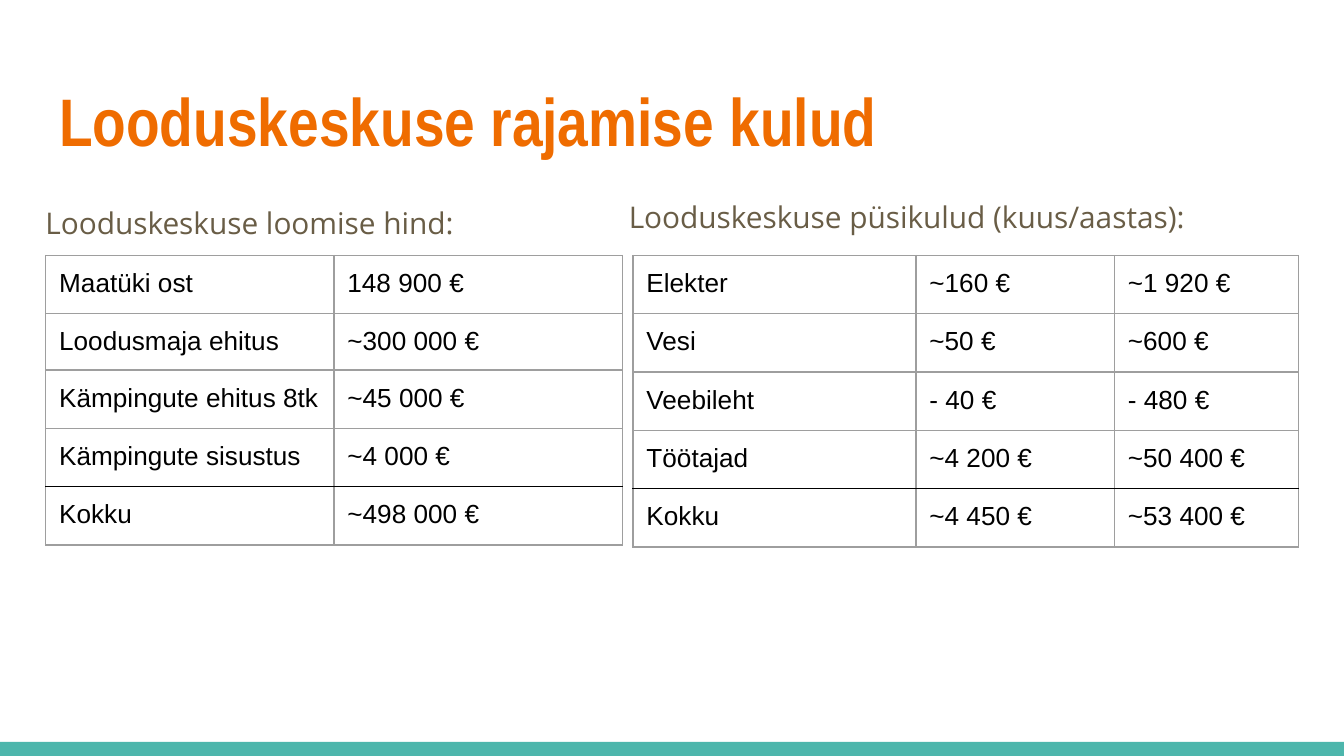
from lxml.etree import SubElement
from pptx import Presentation
from pptx.dml.color import RGBColor
from pptx.enum.shapes import MSO_SHAPE as Shape
from pptx.enum.text import MSO_ANCHOR as Anchor, MSO_AUTO_SIZE as AutoSize, PP_ALIGN as Align
from pptx.oxml.ns import qn
from pptx.util import Inches, Pt

GREY = "9E9E9E"
BLACK = "000000"
PADDING = Inches(0.1)
ROW_HEIGHT = 2.17 / 5
CREATION_COSTS = [
    ["Maatüki ost", "148 900 €"],
    ["Loodusmaja ehitus", "~300 000 €"],
    ["Kämpingute ehitus 8tk", "~45 000 €"],
    ["Kämpingute sisustus", "~4 000 €"],
    ["Kokku", "~498 000 €"],
]
RUNNING_COSTS = [
    ["Elekter", "~160 €", "~1 920 €"],
    ["Vesi", "~50 €", "~600 €"],
    ["Veebileht", "- 40 €", "- 480 €"],
    ["Töötajad", "~4 200 €", "~50 400 €"],
    ["Kokku", "~4 450 €", "~53 400 €"],
]


def color(value):
    return RGBColor.from_string(value)


def write_text(frame, text, *, size, font, fill, bold=False, spacing=None):
    para = frame.paragraphs[0]
    para.alignment = Align.LEFT
    para.line_spacing = spacing
    span = para.add_run()
    span.text = text
    span.font.size = Pt(size)
    span.font.name = font
    span.font.bold = bold
    span.font.color.rgb = color(fill)


def set_frame(frame):
    frame.word_wrap = True
    frame.auto_size = AutoSize.NONE
    frame.vertical_anchor = Anchor.TOP
    frame.margin_left = frame.margin_right = PADDING
    frame.margin_top = frame.margin_bottom = PADDING


def add_title(page, text):
    title = page.shapes.title
    title.left, title.top = Inches(0.34), Inches(0.49)
    title.width, title.height = Inches(9.32), Inches(0.77)
    set_frame(title.text_frame)
    write_text(title.text_frame, text, size=36, font="Arial Narrow", fill="EF6C00", bold=True)


def add_subtitle(page, text, left, width, spacing=None):
    box = page.shapes.add_textbox(Inches(left), Inches(1.38), Inches(width), Inches(0.51))
    set_frame(box.text_frame)
    write_text(box.text_frame, text, size=16, font="Open Sans", fill="695D46", spacing=spacing)


def set_borders(cell, **sides):
    properties = cell._tc.get_or_add_tcPr()
    for position, (side, value) in enumerate(sides.items()):
        line = SubElement(properties, qn(f"a:ln{side}"), w=str(Pt(0.75)))
        fill = SubElement(line, qn("a:solidFill"))
        SubElement(fill, qn("a:srgbClr"), val=value)
        properties.insert(position, line)


def add_cost_table(page, rows, left, width, shares, heights):
    frame = page.shapes.add_table(
        len(rows), len(shares), Inches(left), Inches(1.9), Inches(width), Inches(sum(heights))
    )
    table = frame.table
    table.first_row = table.horz_banding = False
    for column, share in zip(table.columns, shares):
        column.width = Inches(width * share / sum(shares))
    total = len(rows) - 1
    for index, (values, height) in enumerate(zip(rows, heights)):
        table.rows[index].height = Inches(height)
        top = BLACK if index == total else GREY
        bottom = BLACK if index == total - 1 else GREY
        for cell, value in zip(table.rows[index].cells, values):
            cell.margin_left = cell.margin_right = PADDING
            cell.margin_top = cell.margin_bottom = PADDING
            cell.fill.background()
            set_borders(cell, L=GREY, R=GREY, T=top, B=bottom)
            write_text(cell.text_frame, value, size=14, font="Arial", fill=BLACK)


def add_footer_bar(page):
    bar = page.shapes.add_shape(Shape.RECTANGLE, 0, Inches(5.52), Inches(10), Inches(0.11))
    bar.shadow.inherit = False
    bar.fill.solid()
    bar.fill.fore_color.rgb = color("4DB6AC")
    bar.line.fill.background()


def main():
    deck = Presentation()
    deck.slide_width = Inches(10)
    deck.slide_height = Inches(10 * 9 / 16)
    page = deck.slides.add_slide(deck.slide_layouts[5])
    add_footer_bar(page)
    add_title(page, "Looduskeskuse rajamise kulud")
    add_subtitle(page, "Looduskeskuse loomise hind:", 0.24, 4.76, spacing=1.15)
    creation_heights = [ROW_HEIGHT, 0.42] + [ROW_HEIGHT] * 3
    add_cost_table(page, CREATION_COSTS, 0.34, 4.29, [1, 1], creation_heights)
    add_subtitle(page, "Looduskeskuse püsikulud (kuus/aastas):", 4.58, 5.08)
    add_cost_table(page, RUNNING_COSTS, 4.71, 4.95, [2.11, 1.48, 1.37], [ROW_HEIGHT] * 5)
    deck.save("out.pptx")


if __name__ == "__main__":
    main()
